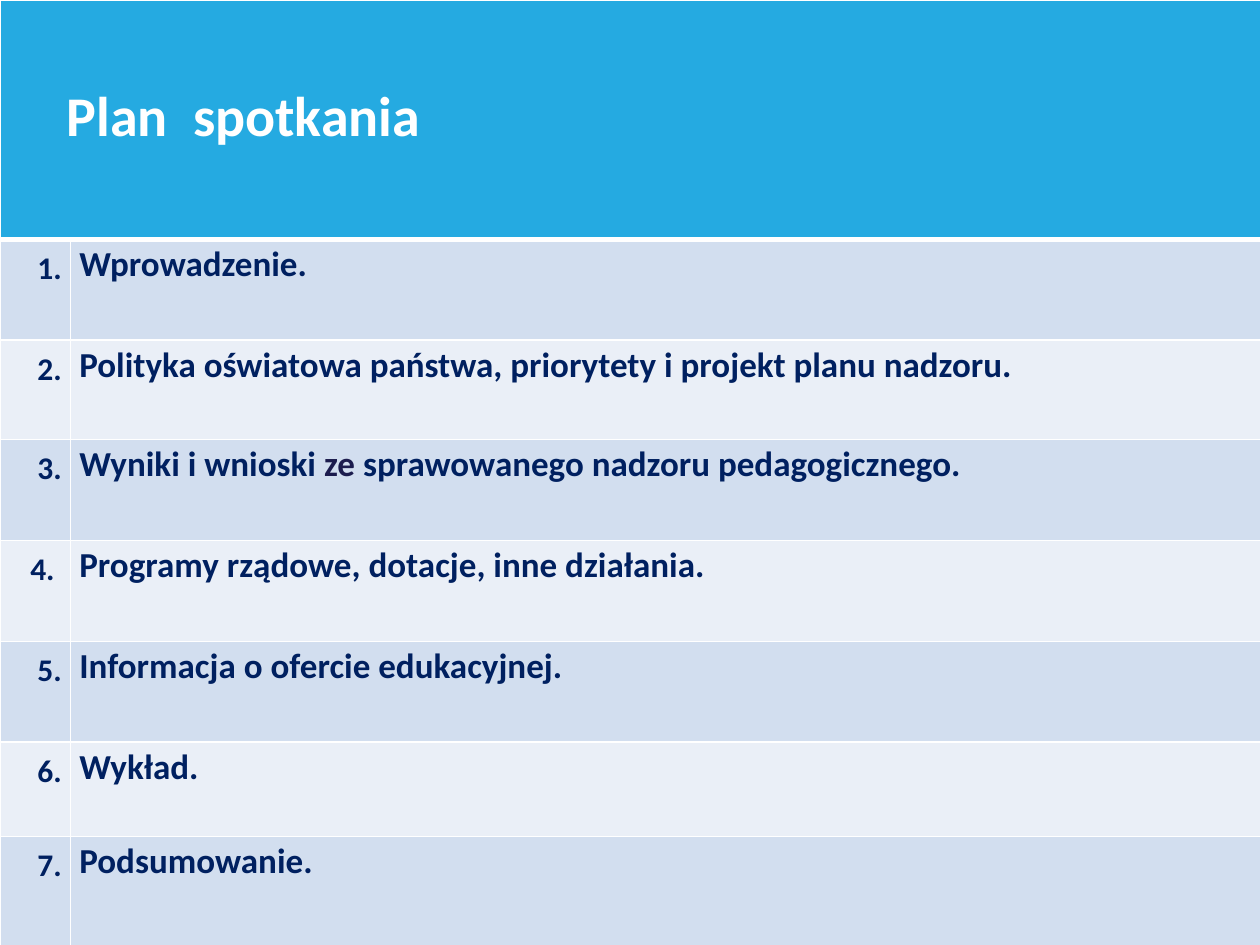
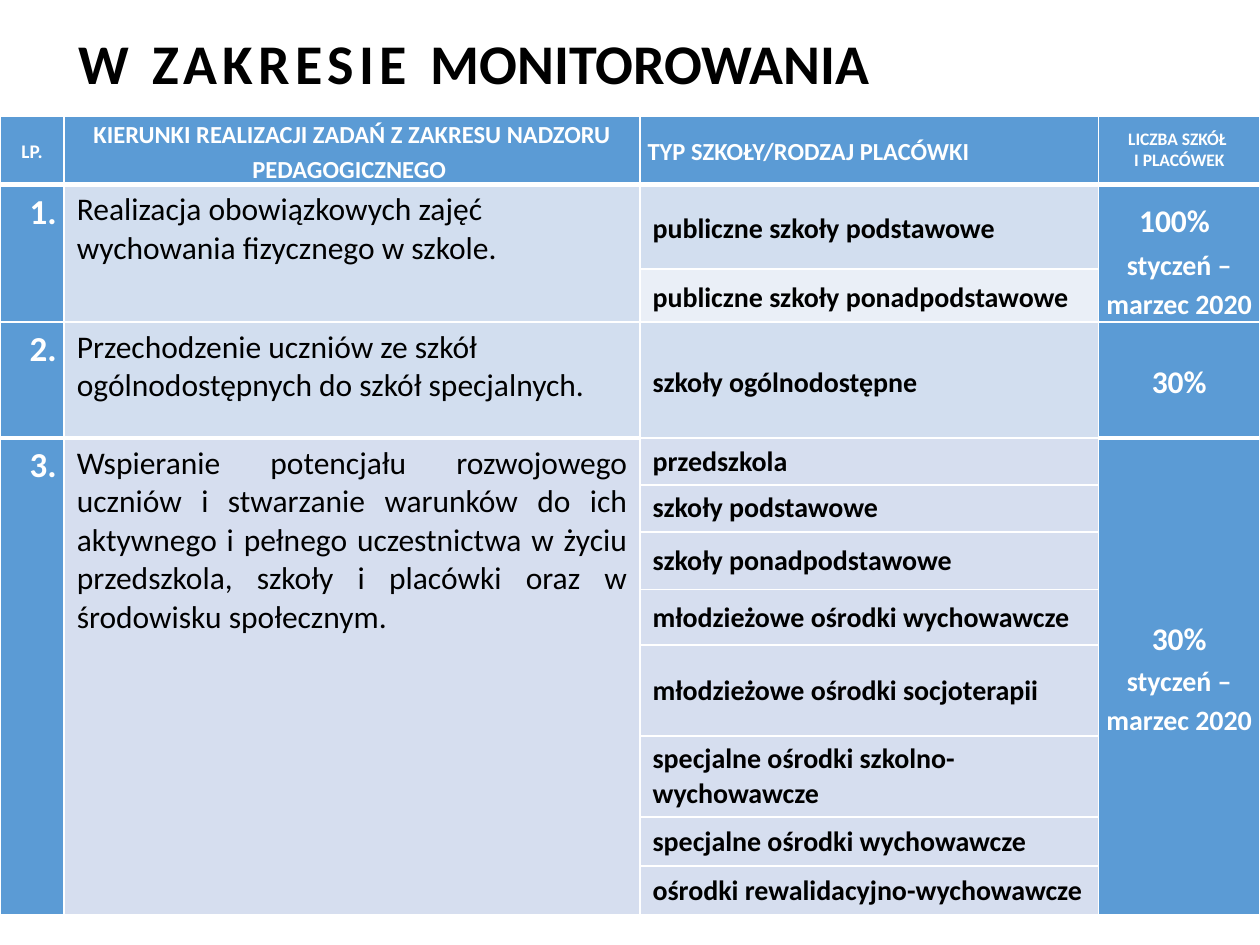
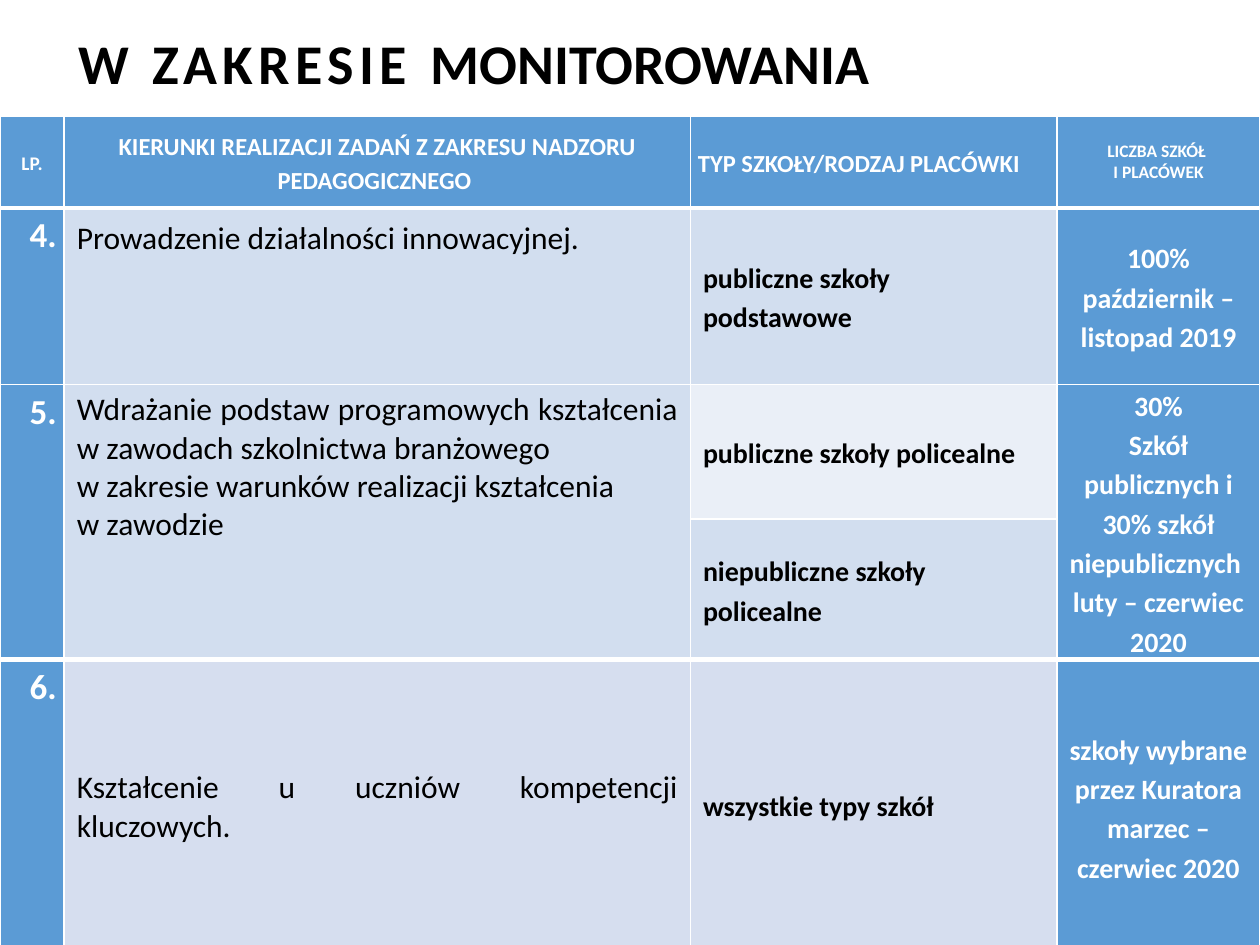
from dataclasses import dataclass, field

from lxml import etree
from pptx import Presentation
from pptx.dml.color import RGBColor
from pptx.enum.text import MSO_ANCHOR, MSO_AUTO_SIZE, PP_ALIGN
from pptx.oxml.ns import qn
from pptx.util import Inches, Pt

WHITE = RGBColor(0xFF, 0xFF, 0xFF)
BLACK = RGBColor(0x00, 0x00, 0x00)
NAVY = RGBColor(0x00, 0x20, 0x60)
INDIGO = RGBColor(0x1C, 0x1C, 0x4E)
SKY = RGBColor(0x25, 0xAA, 0xE1)
BLUE = RGBColor(0x5B, 0x9B, 0xD5)
BAND_DARK = RGBColor(0xD2, 0xDE, 0xEF)
BAND_LIGHT = RGBColor(0xEA, 0xEF, 0xF7)
BAND_LAST = RGBColor(0xD6, 0xDE, 0xEF)
FONT = "Calibri"
THIN, HEAVY = 1, 3
TITLE_ONLY, BLANK = 5, 6
WIDE_INSETS = (0.1, 0.05, 0.1, 0.05)
NARROW_INSETS = (0.06, 0, 0.06, 0)
NO_INSETS = (0, 0, 0, 0)
LEFT, CENTER = PP_ALIGN.LEFT, PP_ALIGN.CENTER
RIGHT, JUSTIFY = PP_ALIGN.RIGHT, PP_ALIGN.JUSTIFY
TOP, MIDDLE = MSO_ANCHOR.TOP, MSO_ANCHOR.MIDDLE


@dataclass
class Task:
    number: str
    aim: list
    kinds: list
    share: list
    aim_style: dict = field(default_factory=dict)


def add_text(p, text, size, color, bold=True, spacing=0):
    for i, line in enumerate(text.split("\n")):
        if i:
            p.add_line_break()
        r = p.add_run()
        r.text = line
        r.font.name, r.font.size, r.font.bold = FONT, Pt(size), bold
        r.font.color.rgb = color
        if spacing:
            r.font._element.set("spc", str(spacing * 100))


def set_borders(cell, top, bottom):
    tc_pr = cell._tc.get_or_add_tcPr()
    for side, width in (("L", THIN), ("R", THIN), ("T", top), ("B", bottom)):
        ln = etree.SubElement(tc_pr, qn(f"a:ln{side}"), w=str(Pt(width)))
        fill = etree.SubElement(ln, qn("a:solidFill"))
        etree.SubElement(fill, qn("a:srgbClr"), val=str(WHITE))


def set_insets(cell, insets):
    (cell.margin_left, cell.margin_top,
     cell.margin_right, cell.margin_bottom) = map(Inches, insets)


def fill_cell(cell, paragraphs, fill, size, color, bold=True, align=LEFT,
              anchor=TOP, leading=1.0, insets=WIDE_INSETS):
    cell.fill.solid()
    cell.fill.fore_color.rgb = fill
    cell.vertical_anchor = anchor
    set_insets(cell, insets)
    tf = cell.text_frame
    for i, runs in enumerate(paragraphs):
        p = tf.add_paragraph() if i else tf.paragraphs[0]
        p.alignment, p.line_spacing = align, leading
        for run in [runs] if isinstance(runs, str) else runs:
            style = dict(size=size, color=color, bold=bold)
            if not isinstance(run, str):
                run, changes = run
                style.update(changes)
            add_text(p, run, **style)


def add_grid(slide, left, top, cols, rows, heavy):
    frame = slide.shapes.add_table(len(rows), len(cols), Inches(left), Inches(top),
                                   Inches(sum(cols)), Inches(sum(rows)))
    table = frame.table
    table.horz_banding = False
    for col, width in zip(table.columns, cols):
        col.width = Inches(width)
    for i, (row, height) in enumerate(zip(table.rows, rows)):
        row.height = Inches(height)
        for j, cell in enumerate(row.cells):
            set_insets(cell, NO_INSETS)
            set_borders(cell, HEAVY if (i, j) in heavy else THIN,
                        HEAVY if (i + 1, j) in heavy else THIN)
    return table


def add_title(slide, left, top, width, height):
    sp = slide.shapes.title
    sp.left, sp.top, sp.width, sp.height = map(Inches, (left, top, width, height))
    tf = sp.text_frame
    tf.word_wrap, tf.auto_size = True, MSO_AUTO_SIZE.NONE
    tf.vertical_anchor = MIDDLE
    tf.margin_left = tf.margin_right = Inches(0.07)
    tf.margin_top = tf.margin_bottom = Inches(0.03)
    p = tf.paragraphs[0]
    p.alignment = LEFT
    add_text(p, "W ZAKRESIE ", 32, BLACK, spacing=3)
    add_text(p, "MONITOROWANIA", 32, BLACK)


def agenda_slide(prs, points):
    slide = prs.slides.add_slide(prs.slide_layouts[BLANK])
    rows = [1.9, 0.8, 0.79, 0.8, 0.8, 0.8, 0.75, 0.88]
    table = add_grid(slide, 0, 0, [0.56, 9.49], rows, {(1, 0), (1, 1)})
    head = table.cell(0, 0)
    head.merge(table.cell(0, 1))
    fill_cell(head, [["Plan", (" ", dict(spacing=7)), "spotkania"]], SKY, 32, WHITE,
              insets=(0.53, 0.66, 0.07, 0.03))
    for i, (number, point) in enumerate(points, 1):
        band = BAND_DARK if i % 2 else BAND_LIGHT
        fill_cell(table.cell(i, 0), [number], band, 18, NAVY, align=RIGHT,
                  leading=0.9, insets=(0.07, 0.1, 0.07, 0.03))
        fill_cell(table.cell(i, 1), [point], band, 20, NAVY,
                  insets=(0.07, 0.03, 0.07, 0.03))


def fill_header(table):
    heads = [
        ("LP.", 11, CENTER, 1.15, NARROW_INSETS),
        ("KIERUNKI REALIZACJI ZADAŃ Z ZAKRESU NADZORU PEDAGOGICZNEGO ", 14, CENTER,
         1.15, NARROW_INSETS),
        ("TYP SZKOŁY/RODZAJ PLACÓWKI", 14, LEFT, 1.15, NARROW_INSETS),
        ("LICZBA SZKÓŁ \nI PLACÓWEK", 10, CENTER, 1.0, NO_INSETS),
    ]
    for j, (label, size, align, leading, insets) in enumerate(heads):
        fill_cell(table.cell(0, j), [label], BLUE, size, WHITE, align=align,
                  anchor=MIDDLE, leading=leading, insets=insets)


def fill_task(table, first, task, is_last):
    end = first + len(task.kinds) - 1
    if end > first:
        for j in (0, 1, 3):
            table.cell(first, j).merge(table.cell(end, j))
    fill_cell(table.cell(first, 0), [task.number], BLUE, 20, WHITE, align=RIGHT,
              leading=1.15, insets=NARROW_INSETS)
    fill_cell(table.cell(first, 1), task.aim, BAND_LAST if is_last else BAND_DARK,
              18, BLACK, bold=False, **task.aim_style)
    for i, kind in enumerate(task.kinds, first):
        band = BAND_LAST if is_last else BAND_DARK if i % 2 else BAND_LIGHT
        fill_cell(table.cell(i, 2), [kind], band, 16, BLACK, anchor=MIDDLE,
                  leading=1.0 if is_last else 1.15)
    fill_cell(table.cell(first, 3), task.share, BLUE, 16, WHITE, align=CENTER,
              anchor=MIDDLE, leading=1.15, insets=NARROW_INSETS)


def monitoring_slide(prs, cols, rows, tasks):
    slide = prs.slides.add_slide(prs.slide_layouts[TITLE_ONLY])
    add_title(slide, 0.55, 0.12, 9.4, 0.74)
    last_kinds = len(tasks[-1].kinds)
    ruled = (0, 1, 2, 3) if last_kinds == 1 else (0, 1, 3)
    heavy = {(1, j) for j in range(4)} | {(len(rows) - last_kinds, j) for j in ruled}
    table = add_grid(slide, 0, 0.92, cols, rows, heavy)
    fill_header(table)
    first = 1
    for task in tasks:
        fill_task(table, first, task, task is tasks[-1])
        first += len(task.kinds)


AGENDA = [
    ("1.", "Wprowadzenie."),
    ("2.", "Polityka oświatowa państwa, priorytety i projekt planu nadzoru."),
    ("3.", ["Wyniki i wnioski ", ("ze ", dict(color=INDIGO)),
            "sprawowanego nadzoru pedagogicznego."]),
    ("4. ", "Programy rządowe, dotacje, inne działania."),
    ("5.", "Informacja o ofercie edukacyjnej."),
    ("6.", "Wykład."),
    ("7.", "Podsumowanie."),
]

LARGE = dict(size=18)
WINTER = "styczeń – marzec 2020"

FIRST_TASKS = [
    Task("1.", ["Realizacja obowiązkowych zajęć wychowania fizycznego w szkole."],
         ["publiczne szkoły podstawowe", "publiczne szkoły ponadpodstawowe"],
         [[("100%", LARGE), (" ", dict(size=24))], WINTER]),
    Task("2.", ["Przechodzenie uczniów ze szkół ogólnodostępnych do szkół specjalnych."],
         ["szkoły ogólnodostępne"], [[("30%", LARGE)]]),
    Task("3.", ["Wspieranie potencjału rozwojowego uczniów i stwarzanie warunków do ich "
                "aktywnego i pełnego uczestnictwa w życiu przedszkola, szkoły i placówki "
                "oraz w środowisku społecznym."],
         ["przedszkola", "szkoły podstawowe", "szkoły ponadpodstawowe",
          "młodzieżowe ośrodki wychowawcze", "młodzieżowe ośrodki socjoterapii",
          "specjalne ośrodki szkolno-wychowawcze", "specjalne ośrodki wychowawcze",
          "ośrodki rewalidacyjno-wychowawcze"],
         [[("30%", LARGE)], WINTER], dict(align=JUSTIFY)),
]

NEXT_TASKS = [
    Task("4.", ["Prowadzenie działalności innowacyjnej."],
         ["publiczne szkoły podstawowe"],
         ["100%", "październik – listopad 2019"], dict(leading=1.15)),
    Task("5.", ["Wdrażanie podstaw programowych kształcenia w zawodach szkolnictwa branżowego",
                "w zakresie warunków realizacji kształcenia", "w zawodzie"],
         ["publiczne szkoły policealne", "niepubliczne szkoły policealne"],
         ["30%", "Szkół publicznych i 30% szkół niepublicznych ", "luty – czerwiec 2020"],
         dict(align=JUSTIFY)),
    Task("6.", ["Kształcenie u uczniów kompetencji kluczowych."],
         ["wszystkie typy szkół"],
         ["szkoły wybrane przez Kuratora", "marzec – czerwiec 2020"],
         dict(align=JUSTIFY, anchor=MIDDLE)),
]


def main():
    prs = Presentation()
    prs.slide_width, prs.slide_height = Inches(10), Inches(7.5)
    agenda_slide(prs, AGENDA)
    monitoring_slide(prs, [0.51, 4.57, 3.64, 1.28],
                     [0.31, 0.67, 0.35, 0.92, 0.19, 0.19, 0.46, 0.44, 0.72, 0.55, 0.39, 0.39],
                     FIRST_TASKS)
    monitoring_slide(prs, [0.51, 4.97, 2.91, 1.61], [0.73, 1.4, 1.07, 1.05, 2.34],
                     NEXT_TASKS)
    prs.save("out.pptx")


if __name__ == "__main__":
    main()
